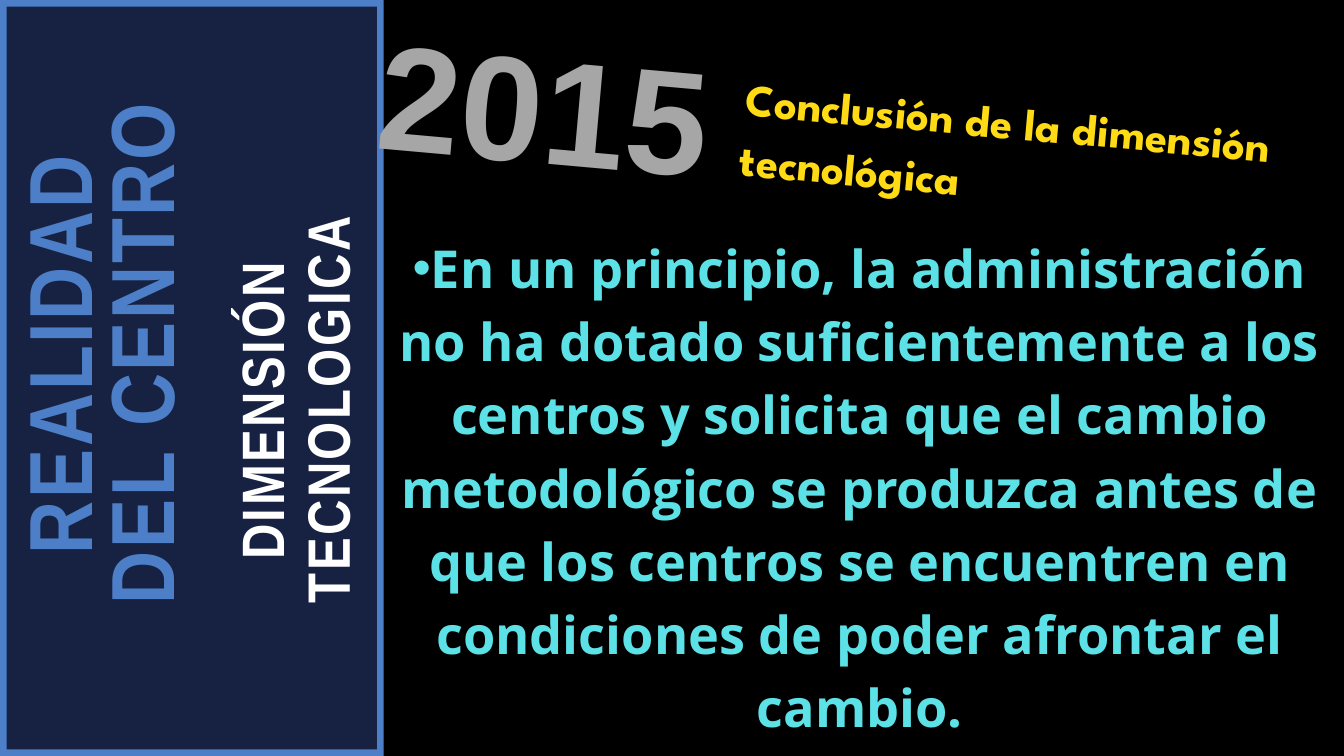
"""Build the slide on the technological dimension of the school."""
from pptx import Presentation
from pptx.dml.color import RGBColor
from pptx.enum.shapes import MSO_SHAPE as Shape
from pptx.enum.text import MSO_ANCHOR as Anchor, MSO_AUTO_SIZE as AutoSize, PP_ALIGN as Align
from pptx.util import Inches, Pt

WIDTH, HEIGHT = 20, 11.25
SIDEBAR_WIDTH, BORDER = 5.71, 0.1
TILT = 5.1
BLUE, NAVY = "4C7FC8", "172243"


def color(value):
    return RGBColor.from_string(value)


class SlideBuilder:
    def __init__(self, presentation):
        self.slide = presentation.slides.add_slide(presentation.slide_layouts[1])
        background = self.slide.background.fill
        background.solid()
        background.fore_color.rgb = color("000000")

    def panel(self, left, top, width, height, fill):
        shape = self.slide.shapes.add_shape(
            Shape.RECTANGLE, Inches(left), Inches(top), Inches(width), Inches(height))
        shape.shadow.inherit = False
        shape.fill.solid()
        shape.fill.fore_color.rgb = color(fill)
        shape.line.fill.background()

    def set_text(self, shape, box, text, font, size, fill, line,
                 align=Align.CENTER, rotation=0, spacing=0, inset=0):
        shape.left, shape.top, shape.width, shape.height = map(Inches, box)
        shape.rotation = rotation
        frame = shape.text_frame
        frame.word_wrap = True
        frame.auto_size = AutoSize.NONE
        frame.vertical_anchor = Anchor.TOP
        frame.margin_left = frame.margin_right = frame.margin_bottom = 0
        frame.margin_top = Pt(inset)
        paragraph = frame.paragraphs[0]
        paragraph.alignment = align
        paragraph.line_spacing = Pt(line)
        paragraph.space_before = Pt(0)
        run = paragraph.add_run()
        run.text = text
        run.font.name = font
        run.font.size = Pt(size)
        run.font.bold = True
        run.font.color.rgb = color(fill)
        if spacing:
            run._r.get_or_add_rPr().set("spc", str(round(spacing * 100)))
        return paragraph

    def label(self, box, *style, **options):
        shape = self.slide.shapes.add_textbox(*map(Inches, box))
        self.set_text(shape, box, *style, **options)

    def title(self, box, *style, **options):
        self.set_text(self.slide.shapes.title, box, *style, **options)

    def bullet(self, box, *style):
        paragraph = self.set_text(self.slide.placeholders[1], box, *style)
        properties = paragraph._p.get_or_add_pPr()
        properties.set("marL", "0")
        properties.set("indent", "0")


def main():
    presentation = Presentation()
    presentation.slide_width = Inches(WIDTH)
    presentation.slide_height = Inches(HEIGHT)
    builder = SlideBuilder(presentation)

    builder.panel(0, 0, SIDEBAR_WIDTH, HEIGHT, BLUE)
    builder.panel(BORDER, BORDER, SIDEBAR_WIDTH - 2 * BORDER, HEIGHT - 2 * BORDER, NAVY)
    builder.label((-2.34, 3.88, 8.27, 2.76), "REALIDAD DEL CENTRO",
                  "Arial Narrow", 96.1, BLUE, 88.4, rotation=270, spacing=2.9)
    builder.label((1.17, 5.06, 6.59, 2.08), "DIMENSIÓN TECNOLOGICA",
                  "Arial Narrow", 64.1, "FFFFFF", 70.5, rotation=270, spacing=2.6)
    builder.label((5.45, 0.66, 5.08, 2.42), "2015",
                  "Arial", 159.1, "A6A6A6", 159.1, align=Align.RIGHT, rotation=TILT)
    builder.title((11.09, 0.44, 8.69, 2.65), "Conclusión de la dimensión tecnológica",
                  "League Spartan", 48, "FFDB15", 64.8,
                  align=Align.LEFT, rotation=TILT, inset=64.8)
    builder.bullet((SIDEBAR_WIDTH, 3.36, 14.17, 7.59),
                   "En un principio, la administración no ha dotado suficientemente a los "
                   "centros y solicita que el cambio metodológico se produzca antes de que "
                   "los centros se encuentren en condiciones de poder afrontar el cambio.",
                   "Open Sans", 56, "5CE1E6", 78.4)
    presentation.save("out.pptx")


if __name__ == "__main__":
    main()
